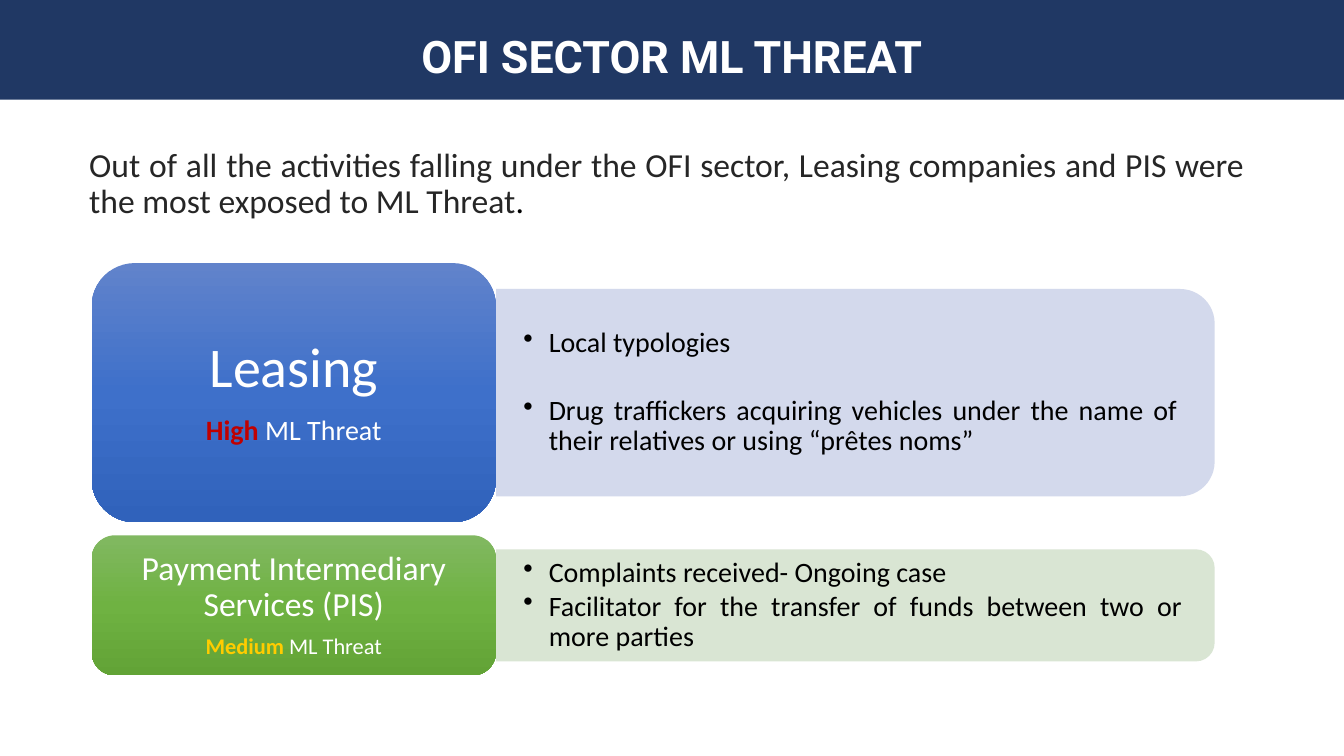
from copy import deepcopy

from lxml import etree
from pptx import Presentation, util as u
from pptx.dml.color import RGBColor
from pptx.enum import shapes, text
from pptx.oxml.ns import qn

# Content
TITLE = "OFI SECTOR ML THREAT"
INTRO = ("Out of all the activities falling under the OFI sector, Leasing companies "
         "and PIS were the most exposed to ML Threat")
SECTORS = [
    {"name": "Leasing", "name_size": 40, "level": "High", "level_size": 20,
     "level_color": "C00000", "gap": 12,
     "gradient": ["6183CB", "3E70CA", "3062BB"], "panel": "CFD5EA",
     "top": 6.63, "height": 6.53, "bullet_gap": 26.6, "text_width": 17.86,
     "bullets": ["Local typologies",
                 "Drug traffickers acquiring vehicles under the name of their "
                 "relatives or using “prêtes noms”"]},
    {"name": "Payment Intermediary Services (PIS)", "name_size": 24,
     "level": "Medium", "level_size": 16, "level_color": "FFCC00", "gap": 8,
     "gradient": ["81B861", "6FB242", "62A336"], "panel": "D5E3CF",
     "top": 13.49, "height": 3.53, "bullet_gap": 2.3, "text_width": 17.98,
     "bullets": ["Complaints received- Ongoing case",
                 "Facilitator for the transfer of funds between two or more parties"]},
]

# Layout in centimetres
SLIDE_WIDTH, SLIDE_HEIGHT = 33.87, 19.05
CARD_LEFT, CARD_WIDTH = 2.31, 10.19
PANEL_LEFT, PANEL_WIDTH = CARD_LEFT + CARD_WIDTH, 18.11
PANEL_SHARE = 0.8
BULLET_INDENT = 0.64


def rgb(hex_color):
    return RGBColor.from_string(hex_color)


def place(shape, left, top, width, height):
    shape.left, shape.top = u.Cm(left), u.Cm(top)
    shape.width, shape.height = u.Cm(width), u.Cm(height)


def set_frame(shape, side, vertical, anchor):
    frame = shape.text_frame
    frame.word_wrap = True
    frame.vertical_anchor = anchor
    frame.margin_left = frame.margin_right = u.Cm(side)
    frame.margin_top = frame.margin_bottom = u.Cm(vertical)
    return frame


def format_paragraph(paragraph, size, color, align, spacing=0.9, font="Calibri"):
    paragraph.alignment = align
    paragraph.line_spacing = spacing
    paragraph.font.name = font
    paragraph.font.size = u.Pt(size)
    paragraph.font.color.rgb = rgb(color)


def add_bullet(paragraph):
    properties = paragraph._p.get_or_add_pPr()
    properties.set("marL", str(u.Cm(BULLET_INDENT)))
    properties.set("indent", str(-u.Cm(BULLET_INDENT)))
    bullet = etree.Element(qn("a:buChar"), char="•")
    properties.insert_element_before(bullet, "a:tabLst", "a:defRPr", "a:extLst")


def set_opacity(color_parent, percent):
    color = color_parent.find(".//" + qn("a:srgbClr"))
    etree.SubElement(color, qn("a:alpha"), val=str(percent * 1000))


def fill_gradient(shape, colors):
    shape.fill.gradient()
    shape.fill.gradient_angle = 270
    stop_list = shape._element.spPr.find(".//" + qn("a:gsLst"))
    stop_list.insert(1, deepcopy(stop_list[0]))
    for index, (stop, color) in enumerate(zip(shape.fill.gradient_stops, colors)):
        stop.color.rgb = rgb(color)
        stop.position = index / (len(colors) - 1)


def add_panel(slide, sector):
    """Panel rounded on its right side, with the bullets over it."""
    height = sector["height"] * PANEL_SHARE
    top = sector["top"] + (sector["height"] - height) / 2

    panel = slide.shapes.add_shape(shapes.MSO_SHAPE.ROUND_2_SAME_RECTANGLE, 0, 0, 0, 0)
    place(panel, PANEL_LEFT + (PANEL_WIDTH - height) / 2,
          top + (height - PANEL_WIDTH) / 2, height, PANEL_WIDTH)
    panel.rotation = 90
    panel.shadow.inherit = False
    panel.fill.solid()
    panel.fill.fore_color.rgb = rgb(sector["panel"])
    set_opacity(panel._element.spPr, 90)
    panel.line.fill.background()

    box = slide.shapes.add_textbox(0, 0, 0, 0)
    place(box, PANEL_LEFT, top, sector["text_width"], height)
    frame = set_frame(box, 0.69, 0.36, text.MSO_ANCHOR.MIDDLE)
    for index, bullet in enumerate(sector["bullets"]):
        paragraph = frame.add_paragraph() if index else frame.paragraphs[0]
        paragraph.text = bullet
        format_paragraph(paragraph, 20, "000000", text.PP_ALIGN.JUSTIFY)
        paragraph.space_before = u.Pt(sector["bullet_gap"] if index else 0)
        add_bullet(paragraph)


def add_card(slide, sector):
    """Gradient card with the sector name and its threat level."""
    card = slide.shapes.add_shape(shapes.MSO_SHAPE.ROUNDED_RECTANGLE, 0, 0, 0, 0)
    place(card, CARD_LEFT, sector["top"], CARD_WIDTH, sector["height"])
    card.shadow.inherit = False
    fill_gradient(card, sector["gradient"])
    card.line.fill.background()

    frame = set_frame(card, 0.3, 0.1, text.MSO_ANCHOR.MIDDLE)
    name = frame.paragraphs[0]
    name.text = sector["name"]
    format_paragraph(name, sector["name_size"], "FFFFFF", text.PP_ALIGN.CENTER)
    name.space_after = u.Pt(sector["gap"])

    threat = frame.add_paragraph()
    format_paragraph(threat, sector["level_size"], "FFFFFF", text.PP_ALIGN.CENTER)
    level = threat.add_run()
    level.text = sector["level"]
    level.font.bold = True
    level.font.color.rgb = rgb(sector["level_color"])
    threat.add_run().text = " ML Threat"


def main():
    presentation = Presentation()
    presentation.slide_width = u.Cm(SLIDE_WIDTH)
    presentation.slide_height = u.Cm(SLIDE_HEIGHT)
    slide = presentation.slides.add_slide(presentation.slide_layouts[5])

    # Title band
    title = slide.shapes.title
    place(title, 0, 0, SLIDE_WIDTH, 2.51)
    title.fill.solid()
    title.fill.fore_color.rgb = rgb("203864")
    frame = set_frame(title, 0.25, 0.13, text.MSO_ANCHOR.MIDDLE)
    frame.margin_top = u.Cm(0.35)
    heading = frame.paragraphs[0]
    heading.text = TITLE
    format_paragraph(heading, 32, "FFFFFF", text.PP_ALIGN.CENTER, 1.07, "Roboto")
    heading.font.bold = True

    # Introduction
    box = slide.shapes.add_textbox(0, 0, 0, 0)
    place(box, 2, 3.6, 29.62, 2.2)
    intro = set_frame(box, 0.25, 0.13, text.MSO_ANCHOR.TOP).paragraphs[0]
    format_paragraph(intro, 24, "262626", text.PP_ALIGN.JUSTIFY)
    intro.add_run().text = INTRO
    period = intro.add_run()
    period.text = "."
    period.font.color.rgb = rgb("000000")

    # Sectors
    for sector in SECTORS:
        add_panel(slide, sector)
        add_card(slide, sector)

    presentation.save("out.pptx")


if __name__ == "__main__":
    main()
